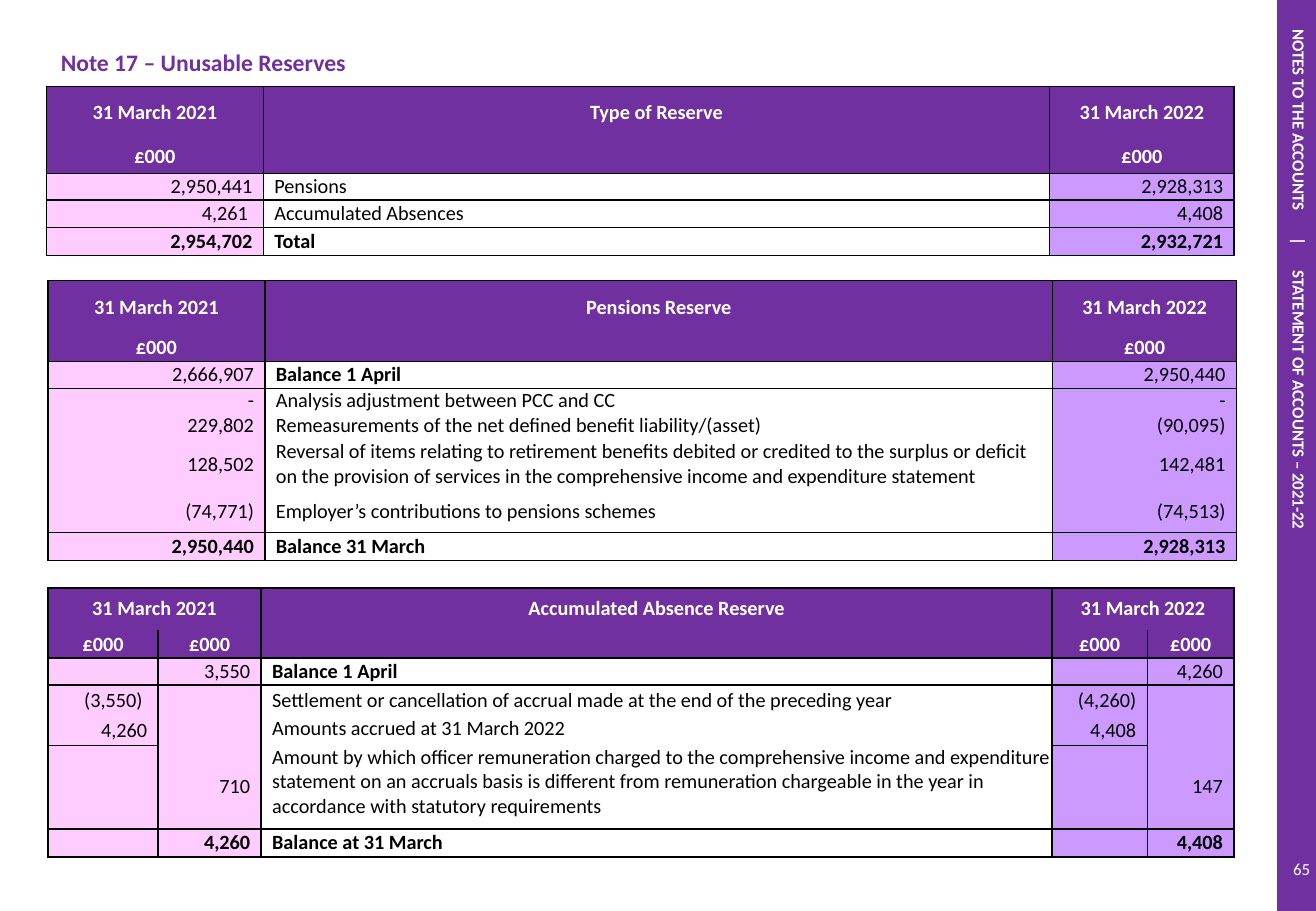
from lxml import etree
from pptx import Presentation
from pptx.dml.color import RGBColor
from pptx.enum.shapes import MSO_SHAPE
from pptx.enum.text import MSO_ANCHOR, PP_ALIGN
from pptx.oxml.ns import qn
from pptx.util import Pt

PURPLE = RGBColor(0x70, 0x30, 0xA0)
PINK = RGBColor(0xFF, 0xCC, 0xFF)
LILAC = RGBColor(0xCC, 0x99, 0xFF)
WHITE = RGBColor(0xFF, 0xFF, 0xFF)
BLACK = RGBColor(0, 0, 0)
NO_STYLE = "{2D5ABB26-0587-4C30-8999-92F81FD0307C}"
LEFT, CENTER, RIGHT = PP_ALIGN.LEFT, PP_ALIGN.CENTER, PP_ALIGN.RIGHT


def write(tf, text, size=12, color=BLACK, bold=False, align=LEFT):
    """Fill the first paragraph; an empty text only fixes the line height."""
    p = tf.paragraphs[0]
    p.alignment = align
    if not text:
        etree.SubElement(p._p, qn("a:endParaRPr"), sz=str(size * 100))
        return p
    r = p.add_run()
    r.text = text
    r.font.name, r.font.size, r.font.bold = "Calibri", Pt(size), bold
    r.font.color.rgb = color
    return p


def border(cell, widths):
    """Draw black cell borders; widths maps L, R, T, B to points."""
    tcPr = cell._tc.get_or_add_tcPr()
    for side in "LRTB":
        if side in widths:
            ln = etree.SubElement(tcPr, qn("a:ln" + side), w=str(Pt(widths[side])))
            fill = etree.SubElement(ln, qn("a:solidFill"))
            etree.SubElement(fill, qn("a:srgbClr"), val=str(BLACK))


prs = Presentation()
prs.slide_width, prs.slide_height = Pt(779.76), Pt(540)
s = prs.slides.add_slide(prs.slide_layouts[6])

# Side bar and page number
bar = s.shapes.add_shape(MSO_SHAPE.RECTANGLE, Pt(756.7), Pt(0), Pt(26.6), Pt(541.4))
bar.shadow.inherit = False
bar.fill.solid()
bar.fill.fore_color.rgb = PURPLE
bar.line.fill.background()
tf = bar.text_frame
tf.margin_left = tf.margin_right = tf.margin_top = tf.margin_bottom = 0
tf.vertical_anchor = MSO_ANCHOR.MIDDLE
tf._txBody.bodyPr.set("vert", "vert")
p = write(tf, "\tNOTES TO THE ACCOUNTS\t|\tSTATEMENT OF ACCOUNTS – 2021-22",
          size=10, color=WHITE, bold=True)
tabs = etree.SubElement(p._p.get_or_add_pPr(), qn("a:tabLst"))
for stop in (17.2, 140.5, 160.6):
    etree.SubElement(tabs, qn("a:tab"), pos=str(Pt(stop)), algn="l")

number = s.shapes.add_textbox(Pt(755.3), Pt(500.4), Pt(28.1), Pt(28.8))
number.text_frame.word_wrap = True
number.text_frame.vertical_anchor = MSO_ANCHOR.MIDDLE
write(number.text_frame, "65", size=10, color=WHITE, align=RIGHT)

# Title
title = s.shapes.add_table(2, 3, Pt(28.8), Pt(11.5), Pt(703.5), Pt(33.8)).table
title._tbl.tblPr.find(qn("a:tableStyleId")).text = NO_STYLE
title.rows[0].height, title.rows[1].height = Pt(14.4), Pt(19.4)
for cell in title.iter_cells():
    cell.margin_top = cell.margin_bottom = Pt(0)
    cell.fill.background()
    if cell is not None:
        cell.vertical_anchor = MSO_ANCHOR.TOP
title.cell(1, 0).merge(title.cell(1, 2))
title.cell(1, 0).margin_top = Pt(2.9)
for col in range(3):
    write(title.cell(0, col).text_frame, "", size=8)
write(title.cell(1, 0).text_frame, "Note 17 – Unusable Reserves",
      size=14, color=PURPLE, bold=True)

# Reserve tables: left, top, column widths, row heights, rows (None = merged)
reserves = [
    (27.4, 51.1, [128.7, 465.8, 109.4], [31.7, 20, 15.8, 16.4, 16.6], [
        ["31 March 2021", "Type of Reserve", "31 March 2022"],
        ["£000", "", "£000"],
        ["2,950,441", "Pensions", "2,928,313"],
        ["4,261 ", "Accumulated Absences", "4,408"],
        ["2,954,702", "Total", "2,932,721"]]),
    (28.4, 166.3, [128.6, 466.8, 108.9],
     [31.7, 16.4, 15.8, 14.6, 14.6, 31.7, 24.5, 16.6], [
        ["31 March 2021", "Pensions Reserve", "31 March 2022"],
        ["£000", "", "£000"],
        ["2,666,907", "Balance 1 April", "2,950,440"],
        ["-", "Analysis adjustment between PCC and CC", "-"],
        ["229,802", "Remeasurements of the net defined benefit liability/(asset)",
         "(90,095)"],
        ["128,502", "Reversal of items relating to retirement benefits debited or "
         "credited to the surplus or deficit on the provision of services in the "
         "comprehensive income and expenditure statement", "142,481"],
        ["(74,771)", "Employer’s contributions to pensions schemes", "(74,513)"],
        ["2,950,440", "Balance 31 March", "2,928,313"]]),
    (28.4, 348.5, [65.3, 61.1, 468.7, 56.3, 51.4],
     [25.1, 16.6, 15.8, 18.9, 16.8, 49.7, 16.6], [
        ["31 March 2021", None, "Accumulated Absence Reserve", "31 March 2022", None],
        ["£000", "£000", "", "£000", "£000"],
        ["", "3,550", "Balance 1 April", "", "4,260"],
        ["(3,550) ", "", "Settlement or cancellation of accrual made at the end of "
         "the preceding year", "(4,260)", ""],
        ["4,260", "", "Amounts accrued at 31 March 2022", "4,408", ""],
        ["", "710", "Amount by which officer remuneration charged to the "
         "comprehensive income and expenditure statement on an accruals basis is "
         "different from remuneration chargeable in the year in accordance with "
         "statutory requirements", "", "147"],
        ["", "4,260", "Balance at 31 March", "", "4,408"]]),
]

for left, top, widths, heights, rows in reserves:
    table = s.shapes.add_table(len(rows), len(widths), Pt(left), Pt(top),
                               Pt(sum(widths)), Pt(sum(heights))).table
    table._tbl.tblPr.find(qn("a:tableStyleId")).text = NO_STYLE
    for col, width in zip(table.columns, widths):
        col.width = Pt(width)
    for row, height in zip(table.rows, heights):
        row.height = Pt(height)
    middle, last = len(widths) // 2, len(rows) - 1
    for i, row in enumerate(rows):
        for j, text in enumerate(row):
            cell = table.cell(i, j)
            if text is None:
                table.cell(i, j - 1).merge(cell)
            header = i < 2
            label = j == middle and not header

            # Rules: all verticals, table top, below header, around the total
            lines = {"L": 1, "R": 1}
            if text is None:
                del lines["L"]
            if i in (0, 2, last):
                lines["T"] = 1
            if i in (1, last - 1, last):
                lines["B"] = 1
            if len(widths) == 5 and j in (0, 3):
                if i == 4:
                    lines["B"] = 0.5
                elif i == 5:
                    lines["T"] = 0.5
            border(cell, lines)

            if label:
                cell.fill.background()
            else:
                cell.fill.solid()
                cell.fill.fore_color.rgb = (
                    PURPLE if header else PINK if j < middle else LILAC)
            cell.margin_top = cell.margin_bottom = Pt(0)
            cell.margin_left = Pt(6.5 if label else 0)
            cell.margin_right = Pt(0 if header or label else 6.5)
            top_set = label and text.startswith("Amount")
            cell.vertical_anchor = MSO_ANCHOR.TOP if top_set else MSO_ANCHOR.MIDDLE
            write(cell.text_frame, text,
                  color=WHITE if header else BLACK,
                  bold=header or i == last or text == "Balance 1 April",
                  align=CENTER if header else LEFT if label else RIGHT)

prs.save("out.pptx")
